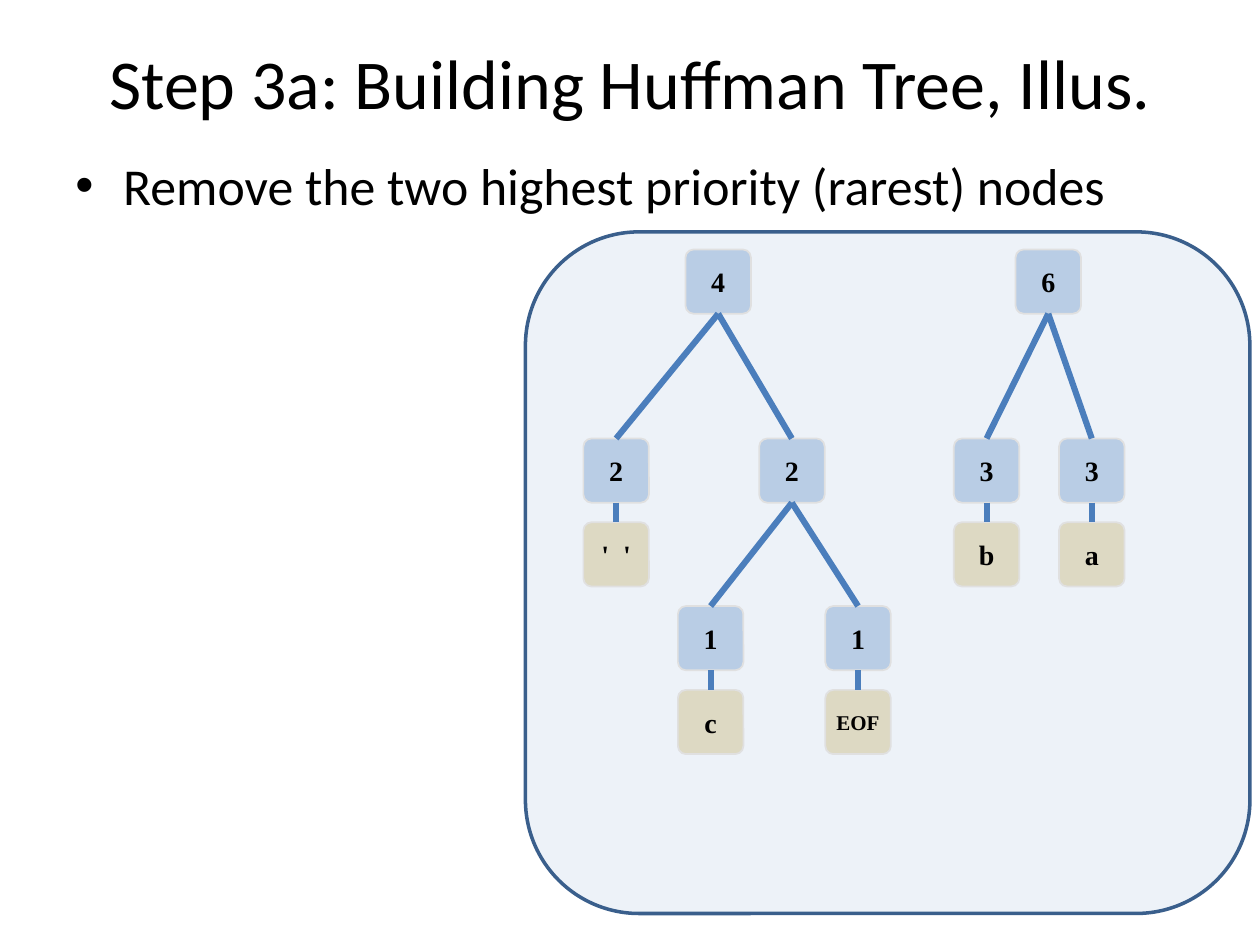
import pptx
import pptx.dml.color
import pptx.enum.shapes
import pptx.enum.text
import pptx.oxml
import pptx.oxml.ns
import pptx.util
from lxml import etree

COLUMNS, ROWS = 100, 75
LEVEL_ROWS = (19.8, 34.8, 48.1)
SYMBOL_DROP = 6.65
NODE_WIDTH, NODE_HEIGHT = 5.2, 5.1
TOP, BOTTOM = 0, 2

# Each node: weight, centre column, then a symbol (leaf) or a list of children
FOREST = [
    ("4", 57, [
        ("2", 48.9, "'  '"),
        ("2", 62.85, [("1", 56.4, "c"), ("1", 68.1, "EOF")]),
    ]),
    ("6", 83.2, [("3", 78.3, "b"), ("3", 86.65, "a")]),
]


def colour(hex_string):
    return pptx.dml.color.RGBColor.from_string(hex_string)


class SlideBuilder:
    text_font, node_font = "Calibri", "Times New Roman"
    black, panel_line, node_line = "000000", "3A5F8C", "E0E0E0"
    panel_fill, weight_fill, symbol_fill = "4F81BD", "B9CDE5", "DDD9C3"
    branch_line = "4B7EBC"

    def __init__(self, presentation):
        self.column = presentation.slide_width / COLUMNS
        self.row = presentation.slide_height / ROWS
        self.slide = presentation.slides.add_slide(presentation.slide_layouts[5])

    def box(self, left, top, width, height):
        return (round(left * self.column), round(top * self.row),
                round(width * self.column), round(height * self.row))

    def add_run(self, paragraph, text, size, font, bold=False):
        run = paragraph.add_run()
        run.text = text
        run.font.size = pptx.util.Pt(size)
        run.font.name = font
        run.font.bold = bold
        run.font.color.rgb = colour(self.black)

    def title(self, text, *area):
        shape = self.slide.shapes.title
        shape.left, shape.top, shape.width, shape.height = self.box(*area)
        frame = shape.text_frame
        frame.auto_size = pptx.enum.text.MSO_AUTO_SIZE.NONE
        frame.vertical_anchor = pptx.enum.text.MSO_ANCHOR.MIDDLE
        paragraph = frame.paragraphs[0]
        paragraph.alignment = pptx.enum.text.PP_ALIGN.CENTER
        self.add_run(paragraph, text, 40, self.text_font)

    def bullet(self, text, *area):
        frame = self.slide.shapes.add_textbox(*self.box(*area)).text_frame
        frame.word_wrap = True
        paragraph = frame.paragraphs[0]
        paragraph.space_before = pptx.util.Pt(6)
        properties = paragraph._p.get_or_add_pPr()
        indent = pptx.util.Inches(0.38)
        properties.set("marL", str(indent))
        properties.set("indent", str(-indent))
        for tag, name, value in (("a:buFont", "typeface", "Arial"),
                                 ("a:buChar", "char", "•")):
            etree.SubElement(properties, pptx.oxml.ns.qn(tag)).set(name, value)
        self.add_run(paragraph, text, 29.6, self.text_font)

    def rounded(self, shapes, area, fill, line, line_width):
        shape = shapes.add_shape(
            pptx.enum.shapes.MSO_SHAPE.ROUNDED_RECTANGLE, *self.box(*area))
        shape.shadow.inherit = False
        shape.fill.solid()
        shape.fill.fore_color.rgb = colour(fill)
        shape.line.color.rgb = colour(line)
        shape.line.width = pptx.util.Pt(line_width)
        return shape

    def panel(self, *area):
        shape = self.rounded(self.slide.shapes, area, self.panel_fill,
                             self.panel_line, 2)
        fill = shape._element.spPr.find(pptx.oxml.ns.qn("a:solidFill"))
        etree.SubElement(fill[0], pptx.oxml.ns.qn("a:alpha")).set("val", "10000")

    def node(self, shapes, text, centre, top, fill):
        area = (centre - NODE_WIDTH / 2, top, NODE_WIDTH, NODE_HEIGHT)
        shape = self.rounded(shapes, area, fill, self.node_line, 1)
        shape.adjustments[0] = 0.126
        frame = shape.text_frame
        frame.word_wrap = False
        frame.vertical_anchor = pptx.enum.text.MSO_ANCHOR.MIDDLE
        paragraph = frame.paragraphs[0]
        paragraph.alignment = pptx.enum.text.PP_ALIGN.CENTER
        size = 12 if text == "EOF" else 16
        self.add_run(paragraph, text, size, self.node_font, bold=True)
        return shape

    def branch(self, shapes, parent, child):
        connector = shapes.add_connector(
            pptx.enum.shapes.MSO_CONNECTOR.STRAIGHT, 0, 0, 0, 0)
        connector.begin_connect(parent, BOTTOM)
        connector.end_connect(child, TOP)
        connector.line.color.rgb = colour(self.branch_line)
        connector.line.width = pptx.util.Pt(3.5)
        etree.SubElement(connector._element.spPr, pptx.oxml.ns.qn("a:effectLst"))

    def tree(self, shapes, root, level=0):
        weight, centre, content = root
        top = LEVEL_ROWS[level]
        parent = self.node(shapes, weight, centre, top, self.weight_fill)
        if isinstance(content, str):
            children = [self.node(shapes, content, centre, top + SYMBOL_DROP,
                                  self.symbol_fill)]
        else:
            children = [self.tree(shapes, child, level + 1) for child in content]
        for child in children:
            self.branch(shapes, parent, child)
        return parent


def main():
    presentation = pptx.Presentation()
    presentation.slide_width = pptx.util.Inches(10)
    presentation.slide_height = pptx.util.Inches(7.5)
    builder = SlideBuilder(presentation)

    # Background panel and text
    builder.panel(41.7, 18.4, 57.5, 54.1)
    builder.title("Step 3a: Building Huffman Tree, Illus.", 5, 3, 90, 7)
    builder.bullet("Remove the two highest priority (rarest) nodes",
                   5, 11.7, 90, 5)

    # One group per tree
    for root in FOREST:
        group = builder.slide.shapes.add_group_shape()
        builder.tree(group.shapes, root)

    presentation.save("out.pptx")


if __name__ == "__main__":
    main()
